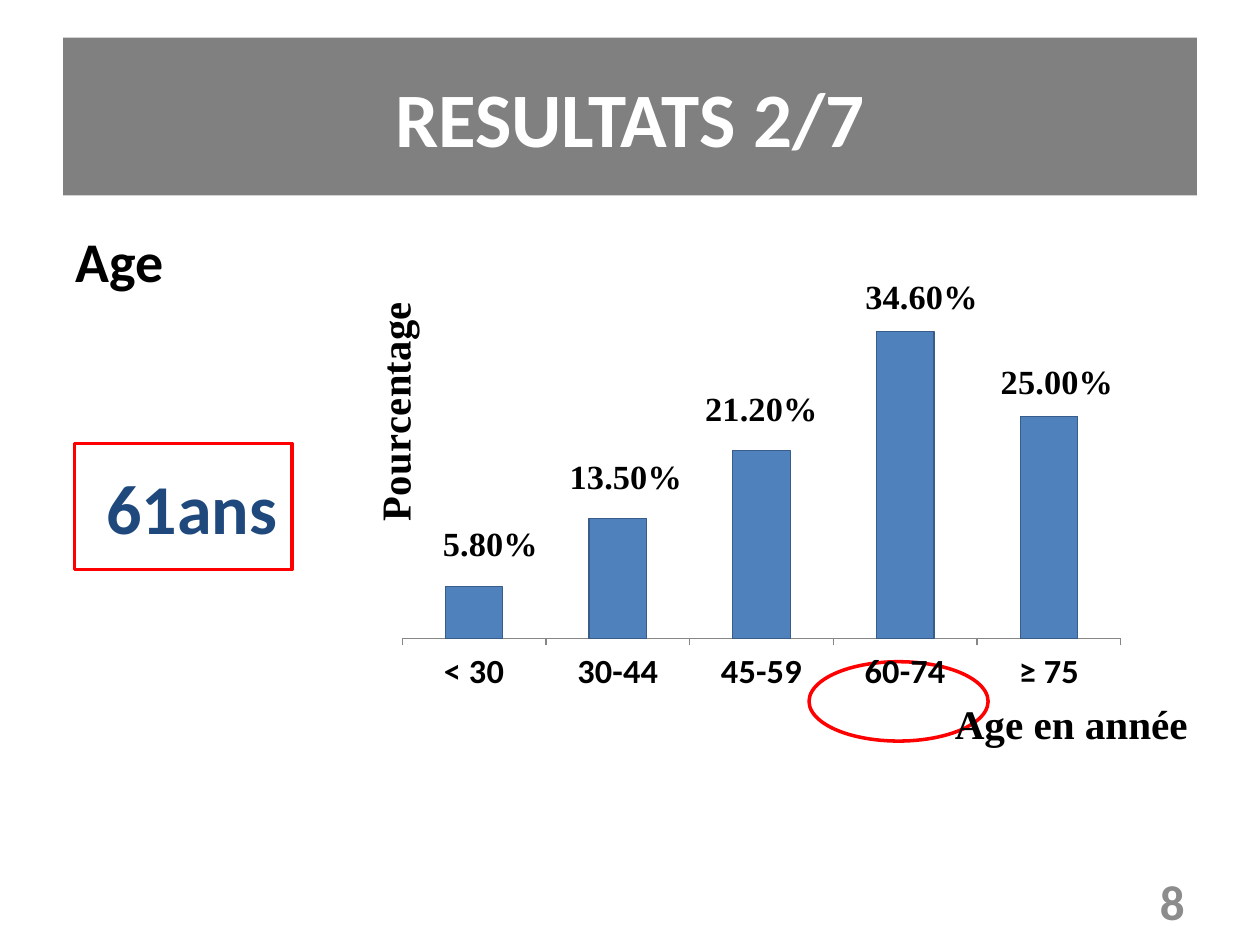
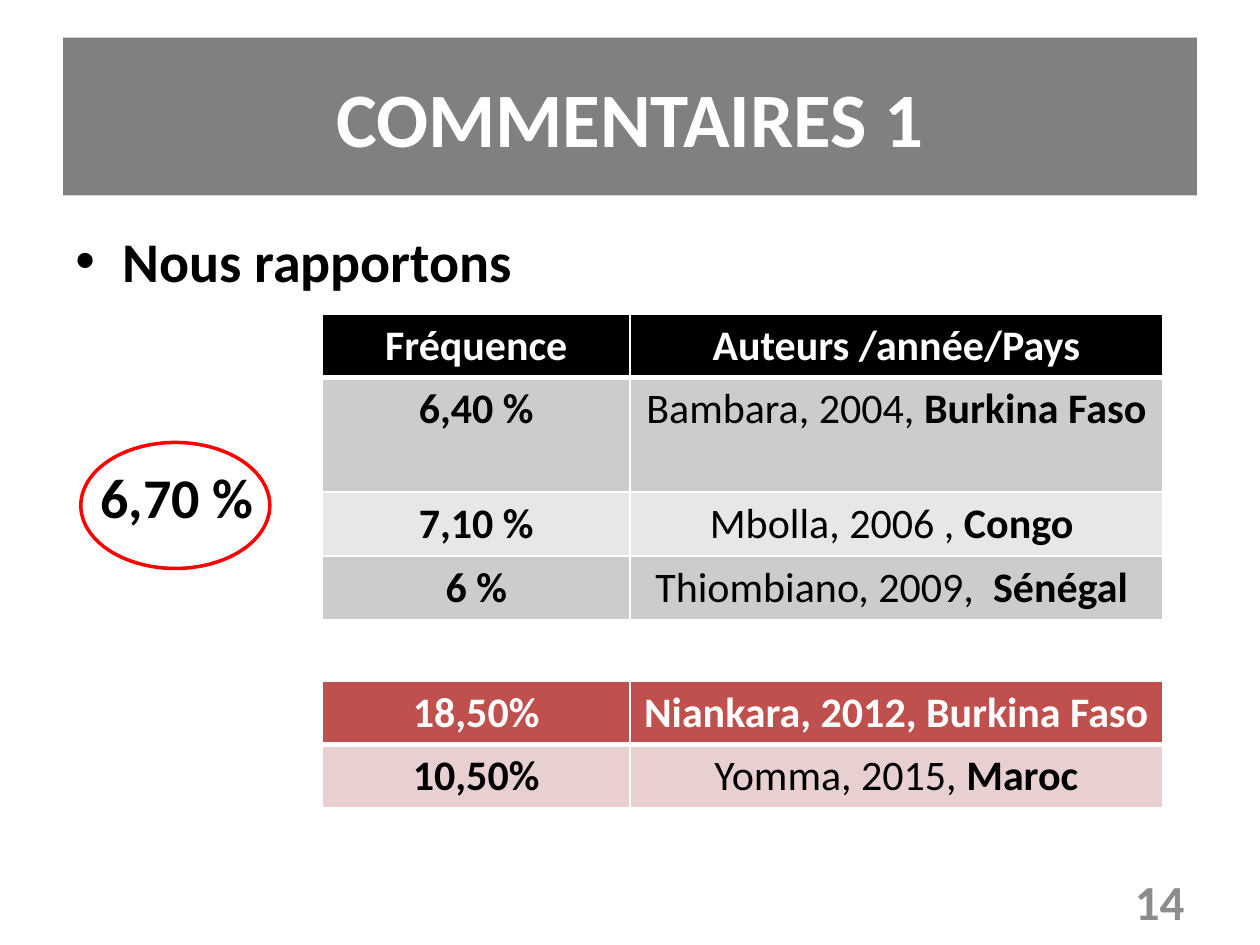
from lxml import etree
from pptx import Presentation
from pptx.chart.data import CategoryChartData
from pptx.dml.color import RGBColor
from pptx.enum.chart import XL_CHART_TYPE, XL_TICK_MARK
from pptx.enum.shapes import MSO_SHAPE
from pptx.enum.text import MSO_ANCHOR, PP_ALIGN
from pptx.oxml import parse_xml
from pptx.oxml.ns import nsdecls, qn
from pptx.util import Cm, Pt

COLUMN_STACKED = XL_CHART_TYPE.COLUMN_STACKED
TICK_OUTSIDE = XL_TICK_MARK.OUTSIDE
OVAL, RECTANGLE = MSO_SHAPE.OVAL, MSO_SHAPE.RECTANGLE
MIDDLE = MSO_ANCHOR.MIDDLE
LEFT, CENTER, RIGHT = PP_ALIGN.LEFT, PP_ALIGN.CENTER, PP_ALIGN.RIGHT

SANS, SERIF = "Calibri", "Times New Roman"
WHITE, BLACK, RED, NAVY = "FFFFFF", "000000", "FF0000", "1F497D"
BAND_GREY, NUMBER_GREY, AXIS_GREY = "808080", "8C8C8C", "868686"
BAR_BLUE, BAR_EDGE = "4F81BD", "385D8A"
TITLE_ONLY = 5

AGE_SHARES = {"< 30": 0.058, "30-44": 0.135, "45-59": 0.212, "60-74": 0.346, "≥ 75": 0.25}
LABEL_OFFSETS = [(0.02, -0.14), (0.01, -0.21), (0, -0.28), (0.02, -0.39), (0.01, -0.3)]

SIMILAR_STUDIES = [
    ("Fréquence", "", "Auteurs /année/Pays"),
    ("6,40 %", "Bambara, 2004, ", "Burkina Faso"),
    ("7,10 %", "Mbolla, 2006 , ", "Congo "),
    ("6 %", "Thiombiano, 2009,  ", "Sénégal "),
]
HIGHER_STUDIES = [
    ("18,50%", "", "Niankara, 2012, Burkina Faso"),
    ("10,50%", "Yomma, 2015, ", "Maroc"),
]


def rgb(color):
    """Turn a hex string into a colour."""
    return RGBColor.from_string(color)


def style_font(font, size, color=BLACK, name=SANS, bold=True):
    """Set the look of a font."""
    font.size, font.name, font.bold = Pt(size), name, bold
    font.color.rgb = rgb(color)


def write(text_frame, text, size, color=BLACK, align=LEFT):
    """Fill a text frame with one styled paragraph and return it."""
    paragraph = text_frame.paragraphs[0]
    paragraph.text, paragraph.alignment = text, align
    style_font(paragraph.font, size, color)
    return paragraph


def add_text(slide, text, box, size, color=BLACK, align=LEFT):
    """Add a wrapped text box and return its paragraph."""
    text_frame = slide.shapes.add_textbox(*map(Cm, box)).text_frame
    text_frame.word_wrap = True
    text_frame.vertical_anchor = MIDDLE
    return write(text_frame, text, size, color, align)


def add_bullet(paragraph):
    """Give a paragraph a hanging round bullet."""
    properties = paragraph._p.get_or_add_pPr()
    properties.set("marL", str(Cm(0.95)))
    properties.set("indent", str(Cm(-0.95)))
    etree.SubElement(properties, qn("a:buFont"), typeface="Arial")
    etree.SubElement(properties, qn("a:buChar"), char="•")


def add_titled_slide(presentation, title, number):
    """Add a slide with the grey title band and its page number."""
    slide = presentation.slides.add_slide(presentation.slide_layouts[TITLE_ONLY])
    band = slide.shapes.title
    band.left, band.top, band.width, band.height = map(Cm, (1.27, 0.76, 22.86, 3.18))
    band.fill.solid()
    band.fill.fore_color.rgb = rgb(BAND_GREY)
    band.text_frame.vertical_anchor = MIDDLE
    write(band.text_frame, title, 44, WHITE, CENTER)
    add_text(slide, number, (18.21, 17.65, 5.92, 1.02), 28, NUMBER_GREY, RIGHT)
    return slide


def add_heading(slide, text):
    """Add the heading below the band and return its paragraph."""
    return add_text(slide, text, (1.27, 4.4, 22.86, 1.7), 32)


def add_red_outline(slide, kind, box):
    """Add a white shape with a red outline."""
    shape = slide.shapes.add_shape(kind, *map(Cm, box))
    shape.shadow.inherit = False
    shape.fill.solid()
    shape.fill.fore_color.rgb = rgb(WHITE)
    shape.line.color.rgb = rgb(RED)
    shape.line.width = Pt(2)
    return shape


def add_key_figure(slide, kind, box, text, size, color, insets):
    """Add a red outline with a figure, shifted by left, top and bottom insets."""
    text_frame = add_red_outline(slide, kind, box).text_frame
    text_frame.word_wrap = False
    text_frame.vertical_anchor = MIDDLE
    text_frame.margin_right = 0
    text_frame.margin_left, text_frame.margin_top, text_frame.margin_bottom = map(Cm, insets)
    write(text_frame, text, size, color, CENTER)


def set_layout(element, index, **values):
    """Place a chart part by hand, as fractions of the chart."""
    for old_layout in element.findall(qn("c:layout")):
        element.remove(old_layout)
    layout = etree.Element(qn("c:layout"))
    manual = etree.SubElement(layout, qn("c:manualLayout"))
    for name, value in values.items():
        etree.SubElement(manual, qn(f"c:{name}"), val=str(value))
    element.insert(index, layout)


def add_axis_title(axis, text, x, y):
    """Add an axis title at a fixed place and return its text frame."""
    text_frame = axis.axis_title.text_frame
    text_frame.text = text
    style_font(text_frame.paragraphs[0].font, 24, name=SERIF)
    set_layout(axis.axis_title._element, 1, xMode="edge", yMode="edge", x=x, y=y)
    return text_frame


def label_bars(series):
    """Put the values above the bars, without leader lines."""
    for index in range(len(AGE_SHARES)):
        style_font(series.points[index].data_label.font, 20, name=SERIF)
    for label, (x, y) in zip(series._element.xpath(".//c:dLbl"), LABEL_OFFSETS):
        set_layout(label, 1, x=x, y=y)
    for leader_lines in series._element.xpath(".//c:showLeaderLines"):
        leader_lines.set("val", "0")


def add_age_chart(slide):
    """Add the column chart of the age groups."""
    data = CategoryChartData(number_format="0.00%")
    data.categories = list(AGE_SHARES)
    data.add_series("Series 1", AGE_SHARES.values())
    box = map(Cm, (7.11, 5.33, 16.99, 10.01))
    chart = slide.shapes.add_chart(COLUMN_STACKED, *box, data).chart
    chart.has_legend = chart.has_title = False
    style_font(chart.font, 10, bold=False)
    chart_element = chart._chartSpace.find(qn("c:chart"))
    chart_element.addnext(parse_xml(
        f"<c:spPr {nsdecls('c', 'a')}><a:noFill/><a:ln><a:noFill/></a:ln></c:spPr>"))
    set_layout(chart_element.find(qn("c:plotArea")), 0, layoutTarget="inner",
               xMode="edge", yMode="edge", x=0.06, y=0.04, w=0.87, h=0.74)

    categories, values = chart.category_axis, chart.value_axis
    style_font(categories.tick_labels.font, 20)
    categories.major_tick_mark = TICK_OUTSIDE
    categories.format.line.color.rgb = rgb(AXIS_GREY)
    add_axis_title(categories, "Age en année", 0.72, 0.89)
    values.minimum_scale, values.maximum_scale = 0, 0.4
    values.has_major_gridlines = values.visible = False
    body = add_axis_title(values, "Pourcentage", 0.01, 0.07)._txBody.bodyPr
    body.set("rot", "-5400000")
    body.set("vert", "horz")

    plot = chart.plots[0]
    plot.gap_width, plot.overlap, plot.vary_by_categories = 150, 100, False
    series = plot.series[0]
    series.format.fill.solid()
    series.format.fill.fore_color.rgb = rgb(BAR_BLUE)
    series.format.line.color.rgb = rgb(BAR_EDGE)
    series.format.line.width = Pt(0.75)
    label_bars(series)


def set_borders(cell, bottom_width):
    """Draw white borders around a cell."""
    properties = cell._tc.get_or_add_tcPr()
    widths = {"lnL": 1, "lnR": 1, "lnT": 1, "lnB": bottom_width}
    for index, (side, width) in enumerate(widths.items()):
        properties.insert(index, parse_xml(
            f'<a:{side} {nsdecls("a")} w="{Pt(width)}"><a:solidFill>'
            f'<a:srgbClr val="{WHITE}"/></a:solidFill></a:{side}>'))


def fill_cell(cell, runs, fill, color, bottom_width):
    """Write (text, bold) runs into a coloured cell."""
    cell.fill.solid()
    cell.fill.fore_color.rgb = rgb(fill)
    set_borders(cell, bottom_width)
    paragraph = cell.text_frame.paragraphs[0]
    paragraph.alignment = CENTER
    style_font(paragraph.font, 24, color)
    for text, bold in runs:
        if text:
            run = paragraph.add_run()
            run.text = text
            style_font(run.font, 24, color, bold=bold)


def add_study_table(slide, top, studies, heights, head_fill, band_fills):
    """Add a table of frequencies and the studies that report them."""
    widths = (6.2, 10.74)
    frame = slide.shapes.add_table(len(studies), len(widths), Cm(6.5), Cm(top),
                                   Cm(sum(widths)), Cm(sum(heights)))
    table = frame.table
    for column, width in zip(table.columns, widths):
        column.width = Cm(width)
    for index, (frequency, author, country) in enumerate(studies):
        table.rows[index].height = Cm(heights[index])
        if index == 0:
            look = head_fill, WHITE, 3
        else:
            look = band_fills[(index - 1) % len(band_fills)], BLACK, 1
        fill_cell(table.cell(index, 0), [(frequency, True)], *look)
        fill_cell(table.cell(index, 1), [(author, False), (country, True)], *look)


def build_age_slide(presentation):
    """Build the slide on the age of the patients."""
    slide = add_titled_slide(presentation, "RESULTATS 2/7", "8")
    add_heading(slide, "Age")
    add_red_outline(slide, OVAL, (16.31, 13.34, 3.61, 1.6))
    add_key_figure(slide, RECTANGLE, (1.5, 8.94, 4.39, 2.54), "61ans", 40, NAVY, (0.35, 0, 0))
    add_age_chart(slide)


def build_comment_slide(presentation):
    """Build the slide that compares the frequency with other studies."""
    slide = add_titled_slide(presentation, "COMMENTAIRES 1", "14")
    add_bullet(add_heading(slide, "Nous rapportons"))
    add_key_figure(slide, OVAL, (1.63, 8.92, 3.81, 2.54), "6,70 %", 32, BLACK, (0.08, 0, 0.38))
    add_study_table(slide, 6.34, SIMILAR_STUDIES, (1.27, 2.31, 1.29, 1.29),
                    BLACK, ("CCCCCC", "E7E7E7"))
    add_study_table(slide, 13.74, HIGHER_STUDIES, (1.27, 1.27), "C0504D", ("E8D0D0",))


def main():
    """Build and save the presentation."""
    presentation = Presentation()
    presentation.slide_width, presentation.slide_height = Cm(25.4), Cm(19.05)
    build_age_slide(presentation)
    build_comment_slide(presentation)
    presentation.save("out.pptx")


if __name__ == "__main__":
    main()
